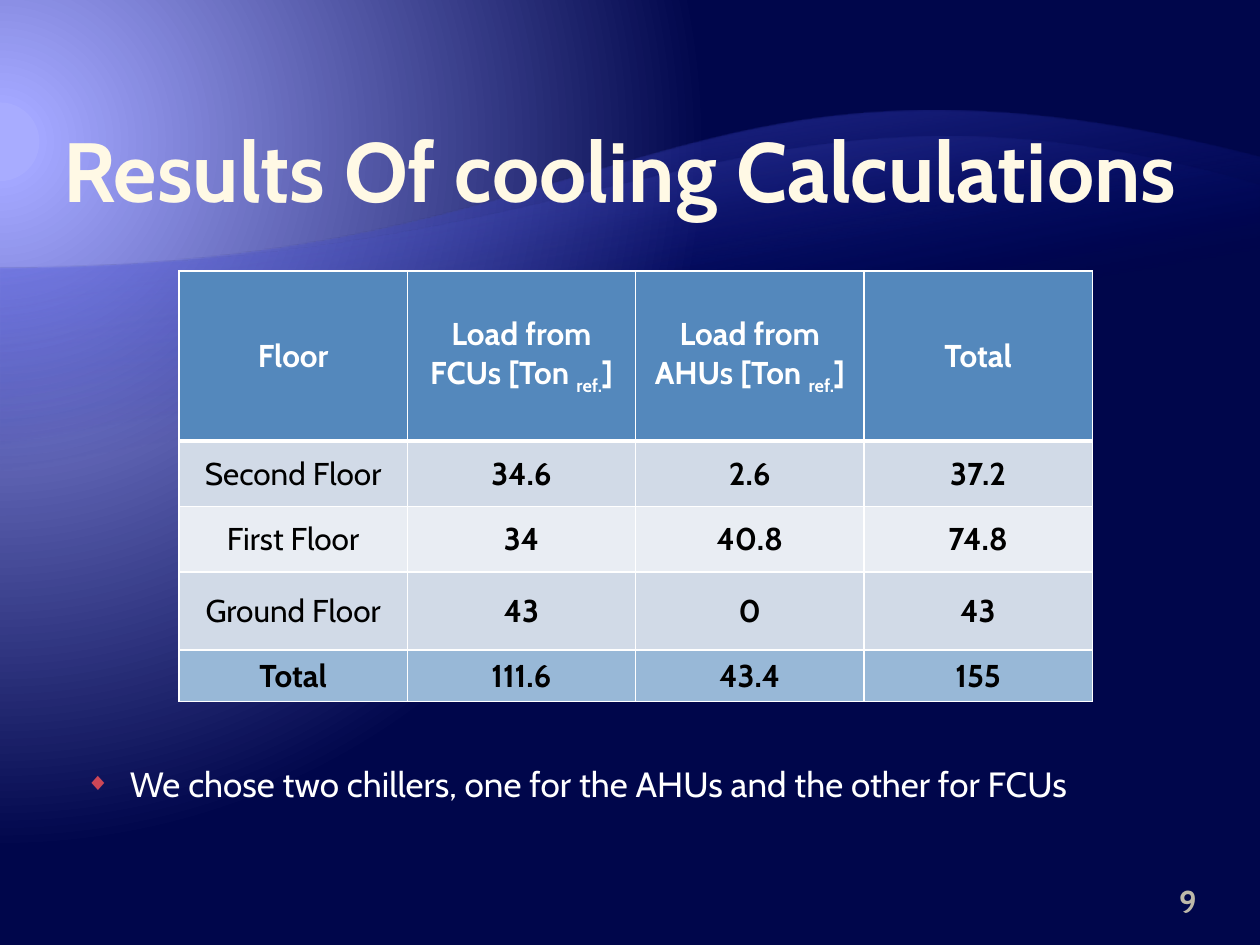
import pptx
import pptx.dml.color
import pptx.enum.text
import pptx.oxml
import pptx.oxml.ns
import pptx.util
from pptx.util import Inches

FONT = "Cabin"
ALIGN = pptx.enum.text.PP_ALIGN
ANCHOR = pptx.enum.text.MSO_ANCHOR
NSDECL = pptx.oxml.ns.nsdecls("a")

HEADERS = ["Floor", ("Load from FCUs [Ton ", "ref.", "]"),
           ("Load from AHUs [Ton ", "ref.", "]"), "Total"]
LOADS = [
    ["Second Floor", "34.6", "2.6", "37.2"],
    ["First Floor", "34", "40.8", "74.8"],
    ["Ground Floor", "43", "0", "43"],
    ["Total", "111.6", "43.4", "155"],
]
ROW_HEIGHTS = [1.35, 0.52, 0.52, 0.62, 0.41]
ROW_FILLS = ["5488BC", "D1DAE7", "E9EDF3", "D1DAE7", "98B8D7"]


def rgb(hex_color):
    return pptx.dml.color.RGBColor.from_string(hex_color)


def xml(markup):
    """Parse one drawing element, adding the namespace to its first tag."""
    cut = min(markup.index(mark) for mark in " >/" if mark in markup)
    return pptx.oxml.parse_xml(f"{markup[:cut]} {NSDECL}{markup[cut:]}")


def set_font(paragraph, size, color, bold=False):
    font = paragraph.font
    font.name, font.size, font.bold = FONT, pptx.util.Pt(size), bold
    font.color.rgb = rgb(color)


def set_gradient(fill, owner, stops, direction):
    """Fill with stops of (position %, colour, opacity %) along a direction."""
    fill.gradient()
    gradient = owner.xpath(".//a:gradFill")[0]
    for child in list(gradient):
        gradient.remove(child)
    stop_list = "".join(
        f'<a:gs pos="{position * 1000}"><a:srgbClr val="{color}">'
        f'<a:alpha val="{opacity * 1000}"/></a:srgbClr></a:gs>'
        for position, color, opacity in stops)
    gradient.append(xml(f"<a:gsLst>{stop_list}</a:gsLst>"))
    gradient.append(xml(direction))


def place(shape, box):
    shape.left, shape.top, shape.width, shape.height = map(Inches, box)


def set_frame(frame, anchor, margins):
    frame.word_wrap = True
    frame.auto_size = pptx.enum.text.MSO_AUTO_SIZE.NONE
    frame.vertical_anchor = anchor
    (frame.margin_left, frame.margin_top,
     frame.margin_right, frame.margin_bottom) = map(Inches, margins)


def add_background(slide):
    set_gradient(
        slide.background.fill, slide.element,
        [(5, "A8ACFF", 100), (5, "A3A7FF", 100), (90, "00064B", 100)],
        '<a:path path="circle">'
        '<a:fillToRect l="20000" t="30000" r="135000" b="100000"/></a:path>')


def bezier(points, steps=60):
    """Points along a cubic curve."""
    for step in range(steps + 1):
        t = step / steps
        weights = ((1 - t) ** 3, 3 * t * (1 - t) ** 2, 3 * t * t * (1 - t), t ** 3)
        yield tuple(sum(w * point[axis] for w, point in zip(weights, points))
                    for axis in (0, 1))


def add_wave(slide, crest, bottom, color, opacity, layer):
    """Slide-wide area under a curved crest, fading downwards."""
    outline = [(Inches(x), Inches(y)) for x, y in
               [*bezier(crest), (10, bottom), (0, bottom)]]
    builder = slide.shapes.build_freeform(*outline[0])
    builder.add_line_segments(outline[1:], close=True)
    wave = builder.convert_to_shape()
    wave.shadow.inherit = False
    wave.line.fill.background()
    set_gradient(wave.fill, wave.element,
                 [(65, "000D9E", 0), (100, color, opacity)],
                 f'<a:lin ang="{260 * 60000}" scaled="0"/>')
    slide.shapes.element.insert(2 + layer, wave.element)


def add_title(slide, box, text):
    title = slide.shapes.title
    place(title, box)
    set_frame(title.text_frame, ANCHOR.BOTTOM, (0, 0.01, 0, 0.01))
    title.text_frame.text = text
    paragraph = title.text_frame.paragraphs[0]
    paragraph.alignment = ALIGN.LEFT
    set_font(paragraph, 48, "FFF9E5", bold=True)


def add_conclusion(slide, box, text):
    body = slide.placeholders[1]
    place(body, box)
    set_frame(body.text_frame, ANCHOR.TOP, (0.1, 0.05, 0.1, 0.05))
    body.text_frame.text = text
    paragraph = body.text_frame.paragraphs[0]
    paragraph.space_before = pptx.util.Pt(4)
    set_font(paragraph, 20, "FFFFFF")
    properties = paragraph._p.get_or_add_pPr()
    properties.set("marL", str(Inches(0.35)))
    properties.set("indent", str(-Inches(0.35)))
    bullet = ['<a:buClr><a:srgbClr val="CC4757"/></a:buClr>',
              '<a:buSzPct val="70000"/>', '<a:buChar char="◆"/>']
    for offset, markup in enumerate(bullet):
        properties.insert(1 + offset, xml(markup))


def add_page_number(slide, box, number):
    page = slide.shapes.add_textbox(*map(Inches, box))
    set_frame(page.text_frame, ANCHOR.BOTTOM, (0.1, 0.05, 0, 0.05))
    page.text_frame.text = number
    paragraph = page.text_frame.paragraphs[0]
    paragraph.alignment = ALIGN.RIGHT
    set_font(paragraph, 18, "BDB8A9", bold=True)


def set_borders(cell, bottom_width, top_width):
    widths = {"L": 1, "R": 1, "T": top_width, "B": bottom_width}
    for side, width in widths.items():
        cell._tc.get_or_add_tcPr().append(xml(
            f'<a:ln{side} w="{pptx.util.Pt(width)}"><a:solidFill>'
            f'<a:srgbClr val="FFFFFF"/></a:solidFill></a:ln{side}>'))


def fill_cell(cell, content, fill, color, bold):
    cell.vertical_anchor = ANCHOR.MIDDLE
    paragraph = cell.text_frame.paragraphs[0]
    paragraph.alignment = ALIGN.CENTER
    set_font(paragraph, 18, color, bold)
    parts = (content,) if isinstance(content, str) else content
    for index, part in enumerate(parts):
        run = paragraph.add_run()
        run.text = part
        if index == 1:  # the unit's subscript
            run.font._element.set("baseline", "-25000")
    cell.fill.solid()
    cell.fill.fore_color.rgb = rgb(fill)


def add_load_table(slide, box):
    rows = [HEADERS, *LOADS]
    table = slide.shapes.add_table(
        len(rows), len(HEADERS), *map(Inches, box)).table
    for column in table.columns:
        column.width = Inches(box[2] / len(HEADERS))
    for r, (row, height, fill) in enumerate(zip(rows, ROW_HEIGHTS, ROW_FILLS)):
        table.rows[r].height = Inches(height)
        for c, content in enumerate(row):
            cell = table.cell(r, c)
            set_borders(cell, 3 if r == 0 else 1, 3 if r == 1 else 1)
            fill_cell(cell, content, fill, "000000" if r else "FFFFFF",
                      bold=c > 0 or r in (0, len(rows) - 1))


def main():
    deck = pptx.Presentation()
    deck.slide_width, deck.slide_height = Inches(10), Inches(7.5)
    slide = deck.slides.add_slide(deck.slide_layouts[1])
    add_background(slide)
    add_wave(slide, [(0, 2.13), (5, 2.13), (5.34, 0.05), (10, 1.25)],
             7.33, "797FFF", 55, layer=0)
    add_wave(slide, [(0, 2.13), (5, 2.13), (5.98, 0.31), (10, 1.47)],
             6.37, "A3A7FF", 30, layer=1)
    add_title(slide, (0.5, 0.08, 9, 1.67), "Results Of cooling Calculations")
    add_page_number(slide, (8.92, 6.95, 0.58, 0.4), "9")
    add_load_table(slide, (1.42, 2.15, 7.25, sum(ROW_HEIGHTS)))
    add_conclusion(slide, (0.58, 6, 8.17, 1.17),
                   "We chose two chillers, one for the AHUs and the other for FCUs")
    deck.save("out.pptx")


if __name__ == "__main__":
    main()
